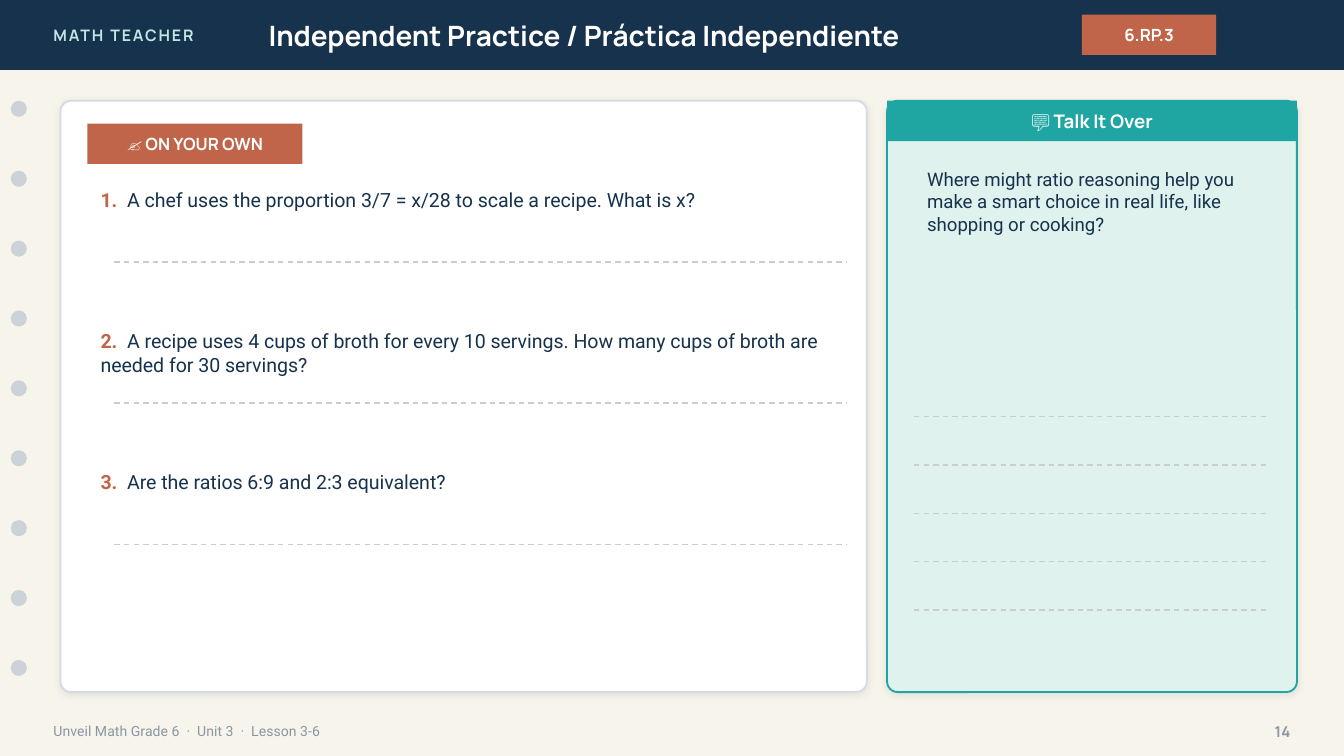
from dataclasses import dataclass

from lxml import etree
from pptx import Presentation
from pptx.dml.color import RGBColor
from pptx.enum.dml import MSO_LINE
from pptx.enum.shapes import MSO_CONNECTOR, MSO_SHAPE
from pptx.enum.text import MSO_ANCHOR, PP_ALIGN
from pptx.oxml import parse_xml
from pptx.oxml.ns import nsdecls, qn
from pptx.util import Inches, Pt

RECT, ROUND_RECT, OVAL = MSO_SHAPE.RECTANGLE, MSO_SHAPE.ROUNDED_RECTANGLE, MSO_SHAPE.OVAL
LEFT, CENTER, RIGHT = PP_ALIGN.LEFT, PP_ALIGN.CENTER, PP_ALIGN.RIGHT
TOP, MIDDLE = MSO_ANCHOR.TOP, MSO_ANCHOR.MIDDLE
STRAIGHT, DASH = MSO_CONNECTOR.STRAIGHT, MSO_LINE.DASH

SLIDE_WIDTH = Inches(10)
SLIDE_HEIGHT = SLIDE_WIDTH * 9 // 16
GRID_COLUMNS = 100
CELL = SLIDE_WIDTH // GRID_COLUMNS

NAVY, TEAL, RUST, WHITE = "17324D", "1FA6A2", "C0654A", "FFFFFF"
CREAM, MINT, PALE_TEAL = "F7F4EC", "DFF2EE", "BFE6E2"
SLATE, CARD_EDGE, HOLE_GREY, RULE_GREY, SHADOW = "8A96A3", "D6DBDF", "CBD3D9", "C7CDD2", "1C2E42"
HEADING, BODY = "Manrope", "Roboto"


@dataclass(frozen=True)
class Area:
    column: float
    row: float
    columns: float
    rows: float

    def box(self) -> tuple[int, ...]:
        return tuple(round(n * CELL) for n in (self.column, self.row, self.columns, self.rows))


@dataclass(frozen=True)
class Style:
    font: str
    size: float
    color: str
    bold: bool = False
    align: PP_ALIGN = LEFT
    anchor: MSO_ANCHOR = MIDDLE
    spacing: float = 0


@dataclass(frozen=True)
class Label:
    area: Area
    text: str
    style: Style


@dataclass(frozen=True)
class Banner:
    label: Label
    fill: str


@dataclass(frozen=True)
class Card:
    area: Area
    fill: str
    edge: str
    corner: float


HEADER = Area(0, 0, GRID_COLUMNS, 5.2)
PRACTICE = Card(Area(4.5, 7.5, 60, 44), WHITE, CARD_EDGE, 0.018)
TALK = Card(Area(66, 7.5, 30.5, 44), MINT, TEAL, 0.026)

BADGE = Style(HEADING, 9, WHITE, True, CENTER)
QUESTION = Style(BODY, 10.5, NAVY, anchor=TOP)

LABELS = (
    Label(Area(3, 0, 24, HEADER.rows), "MATH TEACHER",
          Style(HEADING, 8.5, PALE_TEAL, True, spacing=1)),
    Label(Area(19, 0, 56, HEADER.rows), "Independent Practice / Práctica Independiente",
          Style(HEADING, 15, WHITE, True)),
    Label(Area(3, 53, 70, 2.8), "Unveil Math Grade 6  ·  Unit 3  ·  Lesson 3-6",
          Style(BODY, 7.5, SLATE)),
    Label(Area(92, 53, 5, 2.8), "14", Style(HEADING, 8, SLATE, True, RIGHT)),
    Label(Area(68, 12, 27, 17),
          "Where might ratio reasoning help you make a smart choice in real life, "
          "like shopping or cooking?",
          Style(BODY, 10, NAVY, anchor=TOP)),
)
BANNERS = (
    Banner(Label(Area(80.5, 1.1, 10, 3), "6.RP.3", BADGE), RUST),
    Banner(Label(Area(6.5, 9.2, 16, 3), "✍️ ON YOUR OWN", BADGE), RUST),
    Banner(Label(Area(TALK.area.column, TALK.area.row, TALK.area.columns, 3), "💬 Talk It Over",
                 Style(HEADING, 10, WHITE, True, CENTER)), TEAL),
)
QUESTIONS = (
    "A chef uses the proportion 3/7 = x/28 to scale a recipe. What is x?",
    "A recipe uses 4 cups of broth for every 10 servings. "
    "How many cups of broth are needed for 30 servings?",
    "Are the ratios 6:9 and 2:3 equivalent?",
)
QUESTION_ROW, QUESTION_STEP, ANSWER_DROP = 13.5, 10.5, 6
HOLES, HOLE_ROW, HOLE_STEP = 9, 7.5, 5.2
TALK_LINES, TALK_LINE_ROW, TALK_LINE_STEP = 5, 31, 3.6


def color(code: str) -> RGBColor:
    return RGBColor.from_string(code)


def draw_shape(slide, kind: MSO_SHAPE, area: Area, fill: str):
    shape = slide.shapes.add_shape(kind, *area.box())
    shape.shadow.inherit = False
    shape.fill.solid()
    shape.fill.fore_color.rgb = color(fill)
    shape.line.fill.background()
    return shape


def write(frame, text: str, style: Style, number: str = "") -> None:
    frame.word_wrap = True
    frame.vertical_anchor = style.anchor
    paragraph = frame.paragraphs[0]
    paragraph.alignment = style.align
    paragraph.font.name = style.font
    paragraph.font.size = Pt(style.size)
    if number:
        marker = paragraph.add_run()
        marker.text = number
        marker.font.bold = True
        marker.font.color.rgb = color(RUST)
    wording = paragraph.add_run()
    wording.text = text
    font = wording.font if number else paragraph.font
    font.bold = style.bold
    font.color.rgb = color(style.color)
    if style.spacing:
        wording._r.get_or_add_rPr().set("spc", str(round(style.spacing * 100)))


def draw_label(slide, label: Label, number: str = "") -> None:
    write(slide.shapes.add_textbox(*label.area.box()).text_frame, label.text, label.style, number)


def draw_banner(slide, banner: Banner) -> None:
    shape = draw_shape(slide, RECT, banner.label.area, banner.fill)
    write(shape.text_frame, banner.label.text, banner.label.style)


def draw_card(slide, card: Card) -> None:
    shape = draw_shape(slide, ROUND_RECT, card.area, card.fill)
    shape.adjustments[0] = card.corner
    shape.line.color.rgb = color(card.edge)
    shape.line.width = Pt(1)
    effects = shape._element.spPr.find(qn("a:effectLst"))
    effects.append(parse_xml(
        f'<a:outerShdw {nsdecls("a")} blurRad="{Pt(4)}" dist="{Pt(1)}" dir="5400000" '
        f'algn="bl" rotWithShape="0"><a:srgbClr val="{SHADOW}"><a:alpha val="10000"/>'
        '</a:srgbClr></a:outerShdw>'))


def draw_answer_line(slide, start: float, end: float, row: float) -> None:
    x1, x2, y = (round(n * CELL) for n in (start, end, row))
    rule = slide.shapes.add_connector(STRAIGHT, x1, y, x2, y)
    rule.line.color.rgb = color(RULE_GREY)
    rule.line.width = Pt(0.75)
    rule.line.dash_style = DASH
    etree.SubElement(rule._element.spPr, qn("a:effectLst"))


def main() -> None:
    deck = Presentation()
    deck.slide_width, deck.slide_height = SLIDE_WIDTH, SLIDE_HEIGHT
    slide = deck.slides.add_slide(deck.slide_layouts[6])
    slide.background.fill.solid()
    slide.background.fill.fore_color.rgb = color(CREAM)

    draw_shape(slide, RECT, HEADER, NAVY)
    for hole in range(HOLES):
        draw_shape(slide, OVAL, Area(0.8, HOLE_ROW + hole * HOLE_STEP, 1.2, 1.2), HOLE_GREY)
    for card in (PRACTICE, TALK):
        draw_card(slide, card)
    for banner in BANNERS:
        draw_banner(slide, banner)
    for label in LABELS:
        draw_label(slide, label)
    for index, question in enumerate(QUESTIONS):
        row = QUESTION_ROW + index * QUESTION_STEP
        draw_label(slide, Label(Area(6.5, row, 56.5, 5), question, QUESTION), f"{index + 1}.  ")
        draw_answer_line(slide, 8.5, 63, row + ANSWER_DROP)
    for index in range(TALK_LINES):
        draw_answer_line(slide, 68, 94.5, TALK_LINE_ROW + index * TALK_LINE_STEP)

    deck.save("out.pptx")


if __name__ == "__main__":
    main()
